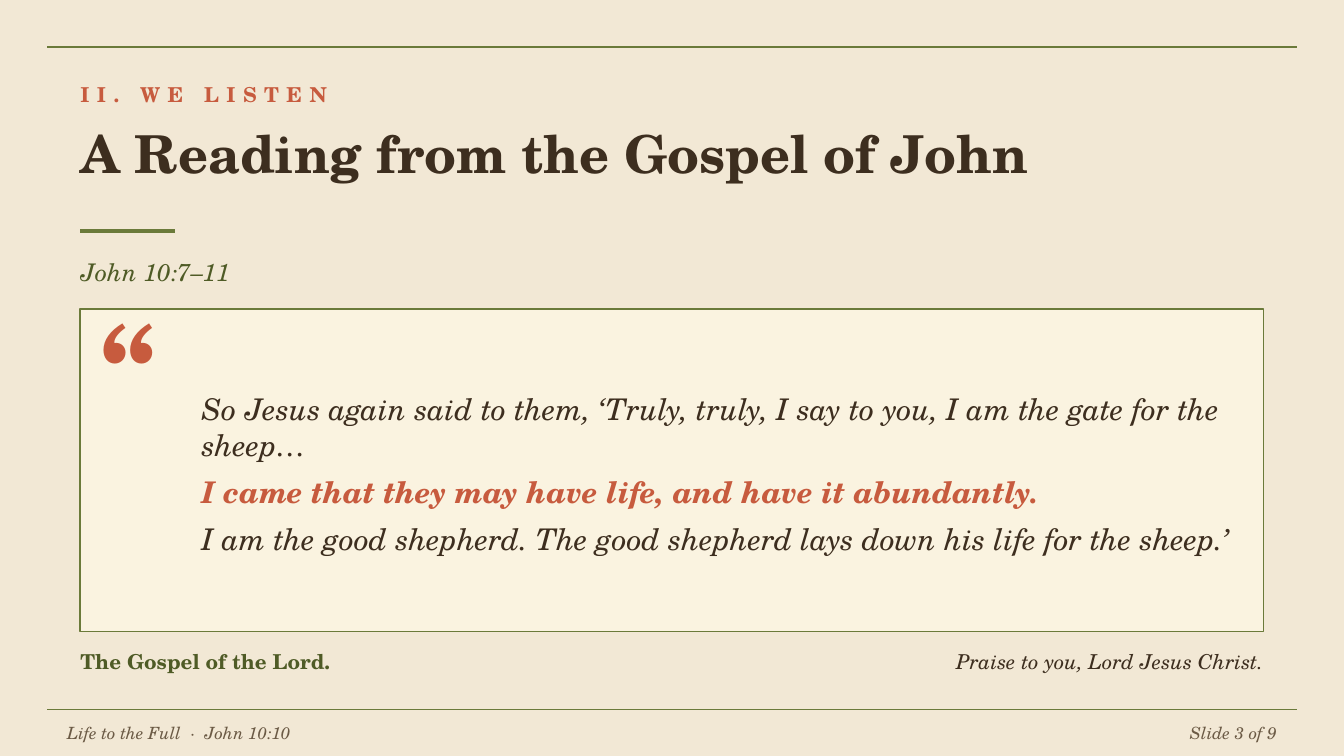
from dataclasses import dataclass

from lxml.etree import SubElement
from pptx import Presentation
from pptx.dml.color import RGBColor
from pptx.enum.shapes import MSO_CONNECTOR, MSO_SHAPE
from pptx.enum.text import MSO_ANCHOR, PP_ALIGN
from pptx.oxml.ns import qn
from pptx.util import Cm, Pt

FONT = "TeX Gyre Schola"
COLORS = {
    "paper": "F2E8D5",
    "card": "FAF3E0",
    "olive": "6B7A3A",
    "moss": "4F5B26",
    "rust": "C75B3E",
    "ink": "3D2E1F",
    "muted": "6B5A45",
}

# Shared margins, in cm
SLIDE_W, SLIDE_H = 25.4, 14.29
EDGE = 0.89
LEFT = 1.52
CONTENT_W = SLIDE_W - 2 * LEFT
FOOT = 1.27
HALF_W = 11.18


@dataclass(frozen=True)
class Box:
    x: float
    y: float
    w: float
    h: float

    def lengths(self) -> tuple:
        return Cm(self.x), Cm(self.y), Cm(self.w), Cm(self.h)


@dataclass(frozen=True)
class Rule:
    x1: float
    x2: float
    y: float
    weight: float


@dataclass(frozen=True)
class Line:
    text: str
    color: str
    bold: bool = False


def rgb(name: str) -> RGBColor:
    return RGBColor.from_string(COLORS[name])


def add_rule(s, rule: Rule) -> None:
    y = Cm(rule.y)
    c = s.shapes.add_connector(MSO_CONNECTOR.STRAIGHT, Cm(rule.x1), y, Cm(rule.x2), y)
    c.line.color.rgb = rgb("olive")
    c.line.width = Pt(rule.weight)
    SubElement(c._element.spPr, qn("a:effectLst"))


def add_text(s, box: Box, *lines: Line, size: float, italic: bool = False,
             align=PP_ALIGN.LEFT, anchor=MSO_ANCHOR.MIDDLE,
             after: float = 0, tracking: float = 0) -> None:
    tf = s.shapes.add_textbox(*box.lengths()).text_frame
    tf.word_wrap = True
    tf.vertical_anchor = anchor
    tf.margin_left = tf.margin_top = tf.margin_right = tf.margin_bottom = 0
    for i, line in enumerate(lines):
        p = tf.add_paragraph() if i else tf.paragraphs[0]
        p.alignment = align
        p.space_after = Pt(after)
        r = p.add_run()
        r.text = line.text
        r.font.name = FONT
        r.font.size = Pt(size)
        r.font.bold = line.bold
        r.font.italic = italic
        r.font.color.rgb = rgb(line.color)
        if tracking:
            r._r.get_or_add_rPr().set("spc", str(int(tracking * 100)))


def add_card(s, box: Box) -> None:
    sp = s.shapes.add_shape(MSO_SHAPE.RECTANGLE, *box.lengths())
    sp.shadow.inherit = False
    sp.fill.solid()
    sp.fill.fore_color.rgb = rgb("card")
    sp.line.color.rgb = rgb("olive")
    sp.line.width = Pt(1)


def main() -> None:
    prs = Presentation()
    prs.slide_width, prs.slide_height = Cm(SLIDE_W), Cm(SLIDE_H)
    s = prs.slides.add_slide(prs.slide_layouts[6])
    s.background.fill.solid()
    s.background.fill.fore_color.rgb = rgb("paper")

    # Frame rules and title accent
    for rule in (
        Rule(EDGE, SLIDE_W - EDGE, 0.89, 0.75),
        Rule(EDGE, SLIDE_W - EDGE, 13.41, 0.75),
        Rule(LEFT, LEFT + 1.78, 4.37, 2.25),
    ):
        add_rule(s, rule)

    # Heading
    add_text(s, Box(LEFT, 1.4, 15.24, 0.76), Line("II. WE LISTEN", "rust", True),
             size=11, tracking=4)
    add_text(s, Box(LEFT, 2.29, CONTENT_W, 1.52),
             Line("A Reading from the Gospel of John", "ink", True),
             size=28, anchor=MSO_ANCHOR.TOP)
    add_text(s, Box(LEFT, 4.7, 15.24, 0.89), Line("John 10:7–11", "moss"),
             size=13, italic=True)

    # Quotation card
    add_card(s, Box(LEFT, 5.84, CONTENT_W, 6.1))
    add_text(s, Box(1.91, 5.72, 1.78, 2.29), Line("“", "rust", True), size=60)
    add_text(
        s, Box(3.81, 6.22, 19.56, 5.46),
        Line("So Jesus again said to them, ‘Truly, truly, I say to you, "
             "I am the gate for the sheep…", "ink"),
        Line("I came that they may have life, and have it abundantly.", "rust", True),
        Line("I am the good shepherd. The good shepherd lays down his life "
             "for the sheep.’", "ink"),
        size=16, italic=True, after=6)

    # Versicle and response
    add_text(s, Box(LEFT, 12.19, HALF_W, 0.64),
             Line("The Gospel of the Lord.", "moss", True), size=11)
    add_text(s, Box(SLIDE_W - LEFT - HALF_W, 12.19, HALF_W, 0.64),
             Line("Praise to you, Lord Jesus Christ.", "ink"),
             size=11, italic=True, align=PP_ALIGN.RIGHT)

    # Footer
    add_text(s, Box(FOOT, 13.54, HALF_W, 0.64),
             Line("Life to the Full  ·  John 10:10", "muted"), size=9, italic=True)
    add_text(s, Box(SLIDE_W - FOOT - HALF_W, 13.54, HALF_W, 0.64),
             Line("Slide 3 of 9", "muted"),
             size=9, italic=True, align=PP_ALIGN.RIGHT)

    prs.save("out.pptx")


if __name__ == "__main__":
    main()
